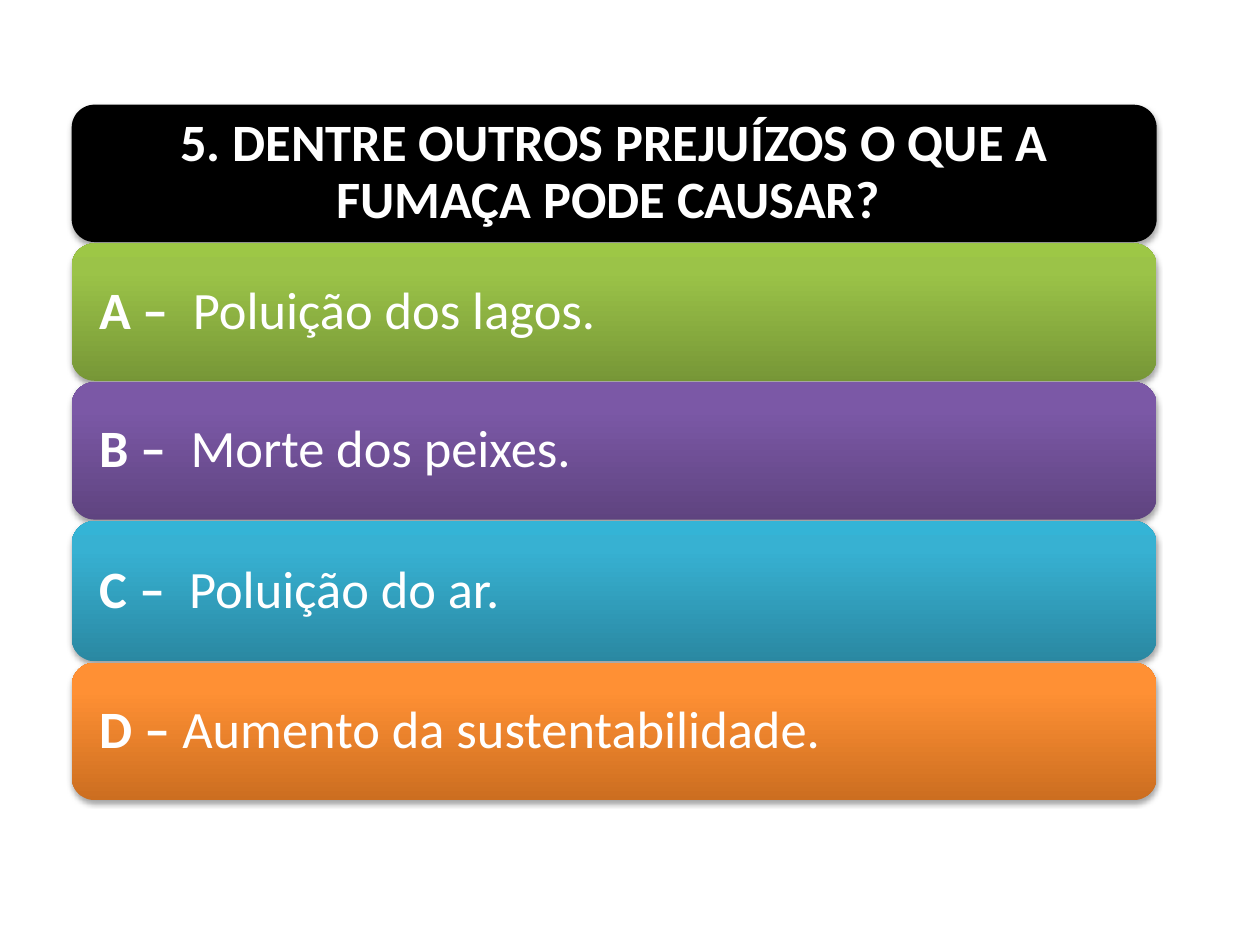
from lxml import etree
from pptx import Presentation
from pptx.dml.color import RGBColor
from pptx.enum.shapes import MSO_SHAPE
from pptx.enum.text import MSO_ANCHOR, MSO_AUTO_SIZE, PP_ALIGN
from pptx.oxml import parse_xml
from pptx.oxml.ns import qn
from pptx.util import Pt

ROUND = MSO_SHAPE.ROUNDED_RECTANGLE
MIDDLE = MSO_ANCHOR.MIDDLE
FIXED = MSO_AUTO_SIZE.NONE
LEFT, CENTER = PP_ALIGN.LEFT, PP_ALIGN.CENTER
NS = "http://schemas.openxmlformats.org/drawingml/2006/main"

BLACK = RGBColor(0x00, 0x00, 0x00)
WHITE = RGBColor(0xFF, 0xFF, 0xFF)
GREEN = (RGBColor(0x77, 0x97, 0x37), RGBColor(0x9B, 0xC3, 0x48), RGBColor(0x9D, 0xC7, 0x46))
PURPLE = (RGBColor(0x5F, 0x44, 0x80), RGBColor(0x7B, 0x58, 0xA6), RGBColor(0x7C, 0x57, 0xA8))
BLUE = (RGBColor(0x2A, 0x88, 0xA2), RGBColor(0x37, 0xB1, 0xD2), RGBColor(0x34, 0xB4, 0xD6))
ORANGE = (RGBColor(0xCC, 0x6E, 0x20), RGBColor(0xFF, 0x90, 0x34), RGBColor(0xFF, 0x91, 0x36))

X, TOP, WIDTH, GAP = 41, 59.8, 620, 0.8
INSET = 12

# Question and answers: height, gradient, bold part, plain part
ROWS = [
    (78.5, None, "5. DENTRE OUTROS PREJUÍZOS O QUE A FUMAÇA PODE CAUSAR? ", ""),
    (78.5, GREEN, "A – ", " Poluição dos lagos."),
    (78.5, PURPLE, "B – ", " Morte dos peixes."),
    (80.2, BLUE, "C – ", " Poluição do ar."),
    (78.5, ORANGE, "D – ", "Aumento da sustentabilidade."),
]


def add_bar(top, height, shades):
    bar = slide.shapes.add_shape(ROUND, Pt(X), Pt(top), Pt(WIDTH), Pt(height))
    bar.line.fill.background()
    bar.fill.solid()
    bar.fill.fore_color.rgb = BLACK
    props = bar.fill._xPr
    if shades:
        # Three stops, darkest at the bottom
        stops = "".join(
            f'<a:gs pos="{pos}"><a:srgbClr val="{shade}"/></a:gs>'
            for pos, shade in zip((0, 80000, 100000), shades))
        grad = parse_xml(f'<a:gradFill xmlns:a="{NS}"><a:gsLst>{stops}</a:gsLst>'
                         '<a:lin ang="16200000" scaled="0"/></a:gradFill>')
        props.replace(props.find(qn("a:solidFill")), grad)
    # Soft shadow straight below
    bar.shadow.inherit = False
    cast = etree.SubElement(
        props.find(qn("a:effectLst")), qn("a:outerShdw"),
        blurRad=str(Pt(3.1)), dist=str(Pt(1.8)), dir="5400000", rotWithShape="0")
    tint = etree.SubElement(cast, qn("a:srgbClr"), val=str(BLACK))
    etree.SubElement(tint, qn("a:alpha"), val="35000")
    return bar


def add_text(frame, align, bold, plain):
    frame.word_wrap = True
    frame.auto_size = FIXED
    frame.vertical_anchor = MIDDLE
    frame.margin_left = frame.margin_right = Pt(INSET)
    frame.margin_top = frame.margin_bottom = Pt(INSET)
    para = frame.paragraphs[0]
    para.alignment = align
    para.line_spacing = 0.9
    for words, heavy in ((bold, True), (plain, False)):
        if words:
            run = para.add_run()
            run.text = words
            run.font.name = "Calibri"
            run.font.size = Pt(30)
            run.font.bold = heavy
            run.font.color.rgb = WHITE


deck = Presentation()
deck.slide_width, deck.slide_height = Pt(720), Pt(540)
slide = deck.slides.add_slide(deck.slide_layouts[5])
title = slide.shapes.title

# Stacked bars
top = TOP
for height, shades, bold, plain in ROWS:
    bar = add_bar(top, height, shades)
    if shades:
        add_text(bar.text_frame, LEFT, bold, plain)
    else:
        # The title lies on the black bar
        title.left, title.top = Pt(X), Pt(top)
        title.width, title.height = Pt(WIDTH), Pt(height)
        add_text(title.text_frame, CENTER, bold, plain)
        bar.element.addnext(title.element)
    top += height + GAP

deck.save("out.pptx")
